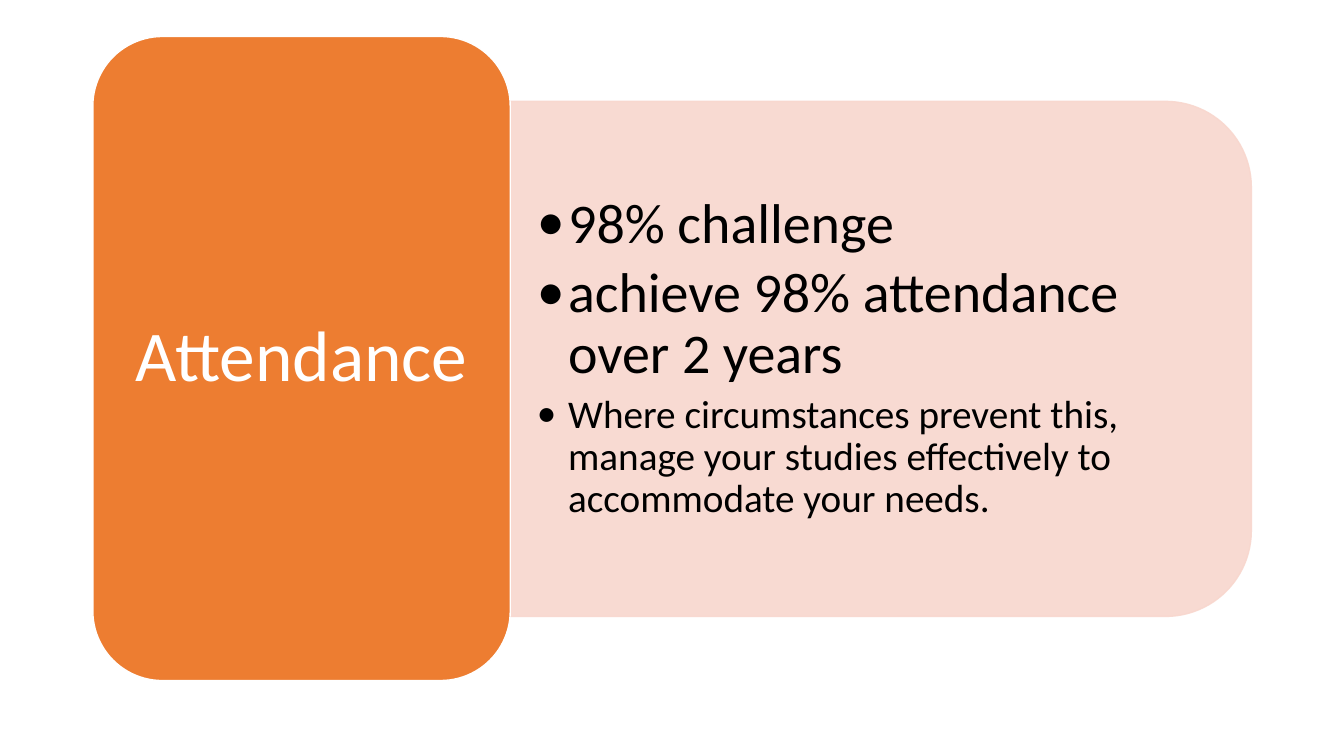
from dataclasses import dataclass

from lxml.etree import SubElement
from pptx import Presentation
from pptx.dml.color import RGBColor
from pptx.enum.shapes import MSO_SHAPE
from pptx.enum.text import MSO_ANCHOR, PP_ALIGN
from pptx.oxml.ns import qn
from pptx.util import Cm, Pt


@dataclass(frozen=True)
class Theme:
    font: str = "Calibri"
    accent: RGBColor = RGBColor(0xED, 0x7D, 0x31)
    tint: RGBColor = RGBColor(0xF8, 0xD7, 0xCE)
    white: RGBColor = RGBColor(0xFF, 0xFF, 0xFF)
    black: RGBColor = RGBColor(0, 0, 0)
    title: int = 51
    large: int = 40
    small: int = 28


theme = Theme()


def add_block(kind, box, fill, line):
    s = slide.shapes.add_shape(kind, *map(Cm, box))
    s.shadow.inherit = False
    s.fill.solid()
    s.fill.fore_color.rgb = fill
    s.line.color.rgb = line
    s.line.width = Pt(1)
    return s


def write(p, text, size, color, **paragraph_format):
    r = p.add_run()
    r.text = text
    for name, value in {"name": theme.font, "size": Pt(size)}.items():
        setattr(r.font, name, value)
    r.font.color.rgb = color
    for name, value in {"line_spacing": 0.9, **paragraph_format}.items():
        setattr(p, name, value)


prs = Presentation()
prs.slide_width, prs.slide_height = Cm(33.87), Cm(19.05)
slide = prs.slides.add_slide(prs.slide_layouts[6])

# Tinted panel, turned so its rounded corners face right
panel = add_block(MSO_SHAPE.ROUND_2_SAME_RECTANGLE, (15.7, -0.3, 12.98, 18.69),
                  theme.tint, theme.tint)
panel.rotation = 90
for color in panel.fill._xPr.iter(qn("a:srgbClr")):
    SubElement(color, qn("a:alpha"), val="90000")

# Bulleted text over the panel
details = slide.shapes.add_textbox(Cm(12.85), Cm(3.17), Cm(18.06), Cm(11.71))
bullets = [
    ("98% challenge", theme.large),
    ("achieve 98% attendance over 2 years", theme.large),
    ("Where circumstances prevent this, manage your studies effectively "
     "to accommodate your needs.", theme.small),
]
tf = details.text_frame
for i, (text, size) in enumerate(bullets):
    p = tf.add_paragraph() if i else tf.paragraphs[0]
    write(p, text, size, theme.black, level=1, space_after=Pt(size * 0.16))
    pPr = p._p.get_or_add_pPr()
    pPr.set("marL", str(Cm(0.79)))
    pPr.set("indent", str(-Cm(0.79)))
    SubElement(pPr, qn("a:buFont"), typeface=theme.font)
    SubElement(pPr, qn("a:buChar"), char="•")

# Heading block
heading = add_block(MSO_SHAPE.ROUNDED_RECTANGLE, (2.34, 0.92, 10.52, 16.23),
                    theme.accent, theme.white)
write(heading.text_frame.paragraphs[0], "Attendance", theme.title, theme.white,
      alignment=PP_ALIGN.CENTER)

# Text frame settings
for s, side, end in ((details, 0.68, 0.36), (heading, 0.2, 0.28)):
    frame_format = {
        "word_wrap": True, "vertical_anchor": MSO_ANCHOR.MIDDLE,
        "margin_left": Cm(side), "margin_right": Cm(side),
        "margin_top": Cm(end), "margin_bottom": Cm(end),
    }
    for name, value in frame_format.items():
        setattr(s.text_frame, name, value)

prs.save("out.pptx")
